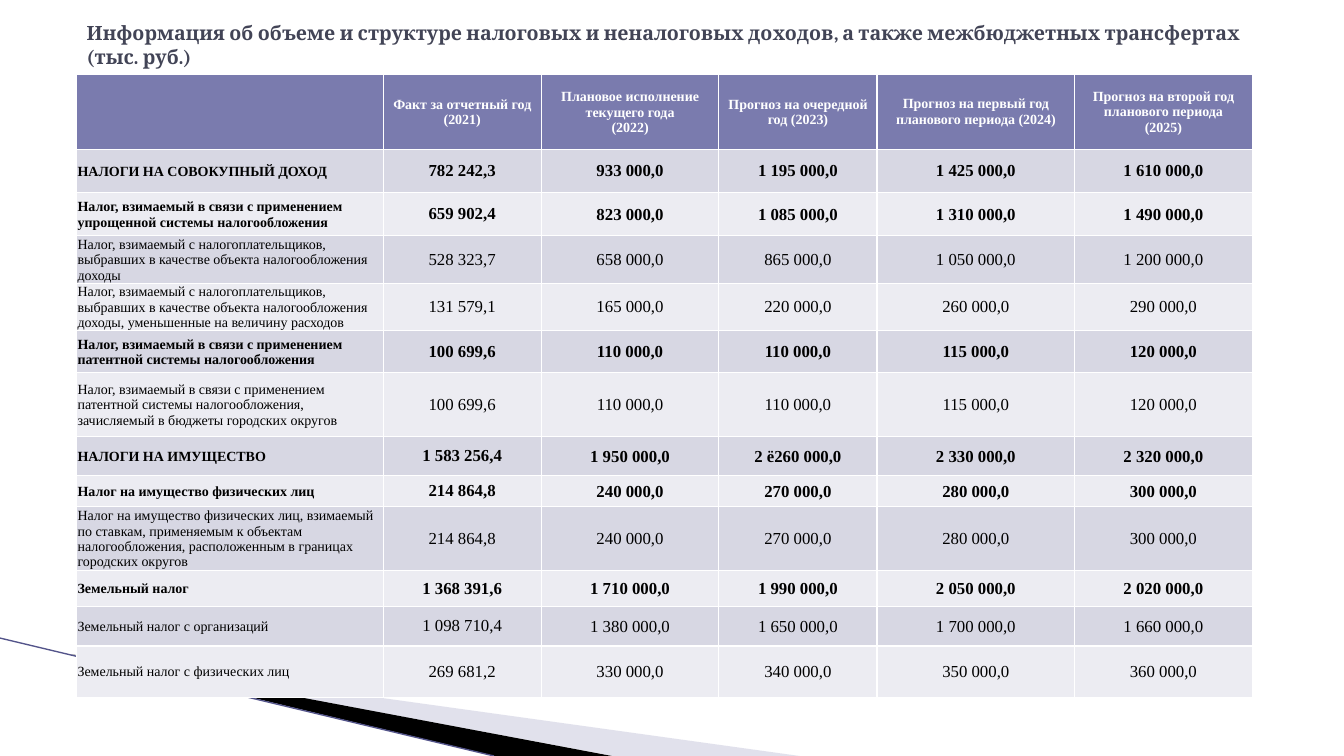
from lxml import etree
from pptx import Presentation
from pptx.dml.color import RGBColor
from pptx.enum import shapes, text
from pptx.oxml.ns import qn
from pptx.util import Inches, Pt

WHITE = RGBColor(0xFF, 0xFF, 0xFF)
BLACK = RGBColor(0, 0, 0)
TITLE_GREY = RGBColor(0x42, 0x44, 0x56)
HEADER = RGBColor(0x7A, 0x7B, 0xAE)
BANDS = (RGBColor(0xD7, 0xD7, 0xE3), RGBColor(0xEC, 0xEC, 0xF2))
LILAC = RGBColor(0xB6, 0xB6, 0xD1)
VIOLET = RGBColor(0x53, 0x54, 0x8A)

TITLE = ("Информация об объеме и структуре налоговых и неналоговых доходов, "
         "а также межбюджетных трансфертах (тыс. руб.)")
COLUMNS = (
    ("", 3.04),
    ("Факт за отчетный год (2021)", 1.57),
    ("Плановое исполнение текущего года\v(2022)", 1.76),
    ("Прогноз на очередной год (2023)", 1.57),
    ("Прогноз на первый год планового периода (2024)", 1.96),
    ("Прогноз на второй год планового периода (2025)", 1.76),
)
HEADER_HEIGHT = 0.74
# Row height, bold, tax name, amounts by year
TAXES = (
    (0.43, True, "НАЛОГИ НА СОВОКУПНЫЙ ДОХОД",
     "782 242,3", "933 000,0", "1 195 000,0", "1 425 000,0", "1 610 000,0"),
    (0.43, True, "Налог, взимаемый в связи с применением упрощенной системы налогообложения",
     "659 902,4", "823 000,0", "1 085 000,0", "1 310 000,0", "1 490 000,0"),
    (0.43, False, "Налог, взимаемый с налогоплательщиков, выбравших в качестве "
     "объекта налогообложения доходы",
     "528 323,7", "658 000,0", "865 000,0", "1 050 000,0", "1 200 000,0"),
    (0.43, False, "Налог, взимаемый с налогоплательщиков, выбравших в качестве "
     "объекта налогообложения доходы, уменьшенные на величину расходов",
     "131 579,1", "165 000,0", "220 000,0", "260 000,0", "290 000,0"),
    (0.42, True, "Налог, взимаемый в связи с применением патентной системы налогообложения",
     "100 699,6", "110 000,0", "110 000,0", "115 000,0", "120 000,0"),
    (0.63, False, "Налог, взимаемый в связи с применением патентной системы "
     "налогообложения, зачисляемый в бюджеты городских округов",
     "100 699,6", "110 000,0", "110 000,0", "115 000,0", "120 000,0"),
    (0.39, True, "НАЛОГИ НА ИМУЩЕСТВО",
     "1 583 256,4", "1 950 000,0", "2 ё260 000,0", "2 330 000,0", "2 320 000,0"),
    (0.31, True, "Налог на имущество физических лиц",
     "214 864,8", "240 000,0", "270 000,0", "280 000,0", "300 000,0"),
    (0.63, False, "Налог на имущество физических лиц, взимаемый по ставкам, применяемым "
     "к объектам налогообложения, расположенным в границах городских округов",
     "214 864,8", "240 000,0", "270 000,0", "280 000,0", "300 000,0"),
    (0.36, True, "Земельный налог",
     "1 368 391,6", "1 710 000,0", "1 990 000,0", "2 050 000,0", "2 020 000,0"),
    (0.39, False, "Земельный налог с организаций",
     "1 098 710,4", "1 380 000,0", "1 650 000,0", "1 700 000,0", "1 660 000,0"),
    (0.51, False, "Земельный налог с физических лиц",
     "269 681,2", "330 000,0", "340 000,0", "350 000,0", "360 000,0"),
)


def add_wedge(slide, left, top, offsets, color, opacity=100):
    """Draw a filled outline through offsets from its left top corner."""
    points = [(Inches(left + x), Inches(top + y)) for x, y in offsets]
    outline = slide.shapes.build_freeform(*points[0])
    outline.add_line_segments(points[1:], close=True)
    wedge = outline.convert_to_shape()
    wedge.shadow.inherit = False
    wedge.line.fill.background()
    wedge.fill.solid()
    wedge.fill.fore_color.rgb = color
    if opacity < 100:
        tint = wedge.fill._xPr.find(qn("a:solidFill"))[0]
        etree.SubElement(tint, qn("a:alpha")).set("val", str(opacity * 1000))


def add_corner_decoration(slide, left, top, width, height):
    add_wedge(slide, left + 0.73, top + 0.17,
              ((0, 0), (width - 0.73, height - 0.17), (5.35, height - 0.17)), LILAC, 40)
    add_wedge(slide, left + 0.71, top + 0.16,
              ((0, 0), (5.36, height - 0.16), (4.2, height - 0.16)), BLACK)
    edge = slide.shapes.add_connector(
        shapes.MSO_CONNECTOR.STRAIGHT, Inches(left), Inches(top),
        Inches(left + 4.9), Inches(top + height))
    edge.line.color.rgb = VIOLET
    edge.line.width = Pt(0.95)
    etree.SubElement(edge._element.spPr, qn("a:effectLst"))


def style_runs(paragraph, size, font, color, bold):
    for run in paragraph.runs:
        run.font.size = Pt(size)
        run.font.name = font
        run.font.color.rgb = color
        run.font.bold = bold


def fill_cell(cell, wording, fill, size, color, bold, centred=True, margins=None):
    cell.fill.solid()
    cell.fill.fore_color.rgb = fill
    cell.vertical_anchor = text.MSO_ANCHOR.MIDDLE
    if margins is not None:
        cell.margin_left = cell.margin_top = cell.margin_right = Inches(margins)
        cell.margin_bottom = 0
    paragraph = cell.text_frame.paragraphs[0]
    paragraph.text = wording
    paragraph.alignment = text.PP_ALIGN.CENTER if centred else text.PP_ALIGN.LEFT
    style_runs(paragraph, size, "Times New Roman", color, bold)


def add_tax_table(slide, left, top, width, height):
    table = slide.shapes.add_table(len(TAXES) + 1, len(COLUMNS), Inches(left), Inches(top),
                                   Inches(width), Inches(height)).table
    table.rows[0].height = Inches(HEADER_HEIGHT)
    for col, (heading, col_width) in enumerate(COLUMNS):
        table.columns[col].width = Inches(col_width)
        fill_cell(table.cell(0, col), heading, HEADER, 10, WHITE, True,
                  margins=0.01 if col < 4 else None)
    for row, (row_height, bold, tax, *amounts) in enumerate(TAXES, start=1):
        band = BANDS[(row - 1) % 2]
        table.rows[row].height = Inches(row_height)
        fill_cell(table.cell(row, 0), tax, band, 10, BLACK, bold, centred=False, margins=0.01)
        for col, amount in enumerate(amounts, start=1):
            fill_cell(table.cell(row, col), amount, band, 12, BLACK, bold,
                      margins=0 if col == 1 else 0.01)


def set_title(slide, left, top, width, height):
    title = slide.shapes.title
    title.left, title.top = Inches(left), Inches(top)
    title.width, title.height = Inches(width), Inches(height)
    frame = title.text_frame
    frame.text = TITLE
    frame.word_wrap = True
    frame.auto_size = text.MSO_AUTO_SIZE.NONE
    frame.vertical_anchor = text.MSO_ANCHOR.MIDDLE
    frame.paragraphs[0].alignment = text.PP_ALIGN.LEFT
    style_runs(frame.paragraphs[0], 14, "Cambria", TITLE_GREY, True)


def main():
    deck = Presentation()
    deck.slide_width, deck.slide_height = Inches(13.33), Inches(7.5)
    slide = deck.slides.add_slide(deck.slide_layouts[5])
    add_corner_decoration(slide, 0, 6.33, 7.93, 1.17)
    add_tax_table(slide, 0.76, 0.74, 11.66, 6.06)
    set_title(slide, 0.76, 0.14, 11.81, 0.61)
    deck.save("out.pptx")


if __name__ == "__main__":
    main()
